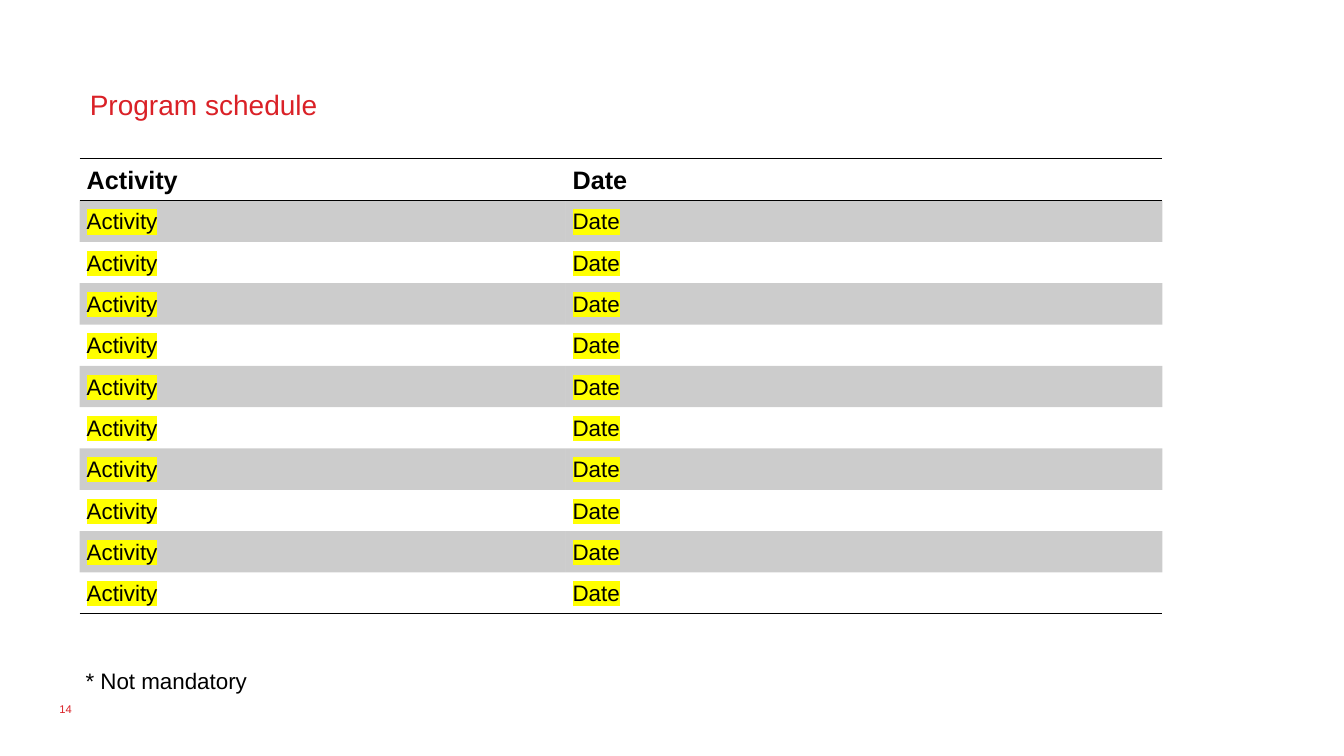
import pptx
import pptx.util
import pptx.dml.color
import pptx.enum.text
import pptx.oxml
import pptx.oxml.ns
from pptx.util import Inches

TITLE = "Program schedule"
HEADINGS = ("Activity", "Date")
SCHEDULE = [("Activity", "Date")] * 10
FOOTNOTE = "* Not mandatory"
PAGE_NUMBER = "14"

RED, BLACK, YELLOW = "DA2127", "000000", "FFFF00"
COLUMN_WIDTHS = (4.82, 5.92)
HEADING_HEIGHT, ROW_HEIGHT = 0.42, 0.41
PLAIN_TABLE_STYLE = "{2D5ABB26-0587-4C30-8999-92F81FD0307C}"
MIDDLE = pptx.enum.text.MSO_ANCHOR.MIDDLE
TOP = pptx.enum.text.MSO_ANCHOR.TOP


def rgb(value):
    return pptx.dml.color.RGBColor.from_string(value)


def xml(markup):
    tag, rest = markup.split(" ", 1)
    return pptx.oxml.parse_xml(f"{tag} {pptx.oxml.ns.nsdecls('a')} {rest}")


def write(frame, text, size=16, color=BLACK, bold=False, highlight=None,
          line_spacing=None, anchor=TOP):
    frame.word_wrap = True
    frame.vertical_anchor = anchor
    paragraph = frame.paragraphs[0]
    paragraph.alignment = pptx.enum.text.PP_ALIGN.LEFT
    if line_spacing:
        paragraph.line_spacing = line_spacing
    run = paragraph.add_run()
    run.text = text
    run.font.name = "Arial"
    run.font.size = pptx.util.Pt(size)
    run.font.bold = bold
    run.font.color.rgb = rgb(color)
    if highlight:
        run.font.fill._xPr.find(pptx.oxml.ns.qn("a:solidFill")).addnext(
            xml(f'<a:highlight ><a:srgbClr val="{highlight}"/></a:highlight>'))


def place(shape, left, top, width, height):
    shape.left, shape.top = Inches(left), Inches(top)
    shape.width, shape.height = Inches(width), Inches(height)


def add_label(slide, box, text, **style):
    label = slide.shapes.add_textbox(*map(Inches, box))
    write(label.text_frame, text, **style)


def format_cell(cell, shaded, ruled_sides):
    cell.margin_left = cell.margin_right = Inches(0.07)
    cell.margin_top = cell.margin_bottom = 0
    cell.vertical_anchor = MIDDLE
    properties = cell._tc.get_or_add_tcPr()
    for side in ruled_sides:
        properties.append(xml(
            f'<a:ln{side} w="12700"><a:solidFill><a:srgbClr val="{BLACK}"/>'
            f'</a:solidFill></a:ln{side}>'))
    if shaded:
        cell.fill.solid()
        cell.fill.fore_color.rgb = rgb(BLACK)
        black = properties.find(".//" + pptx.oxml.ns.qn("a:solidFill") + "/")
        black.append(xml('<a:alpha val="20000"/>'))
    else:
        cell.fill.background()


def add_schedule(slide):
    rows = [HEADINGS] + SCHEDULE
    height = HEADING_HEIGHT + ROW_HEIGHT * len(SCHEDULE)
    schedule = slide.shapes.add_table(
        len(rows), len(HEADINGS), Inches(0.79), Inches(1.57),
        Inches(sum(COLUMN_WIDTHS)), Inches(height)).table
    schedule._tbl.tblPr.find(pptx.oxml.ns.qn("a:tableStyleId")).text = PLAIN_TABLE_STYLE
    schedule.horz_banding = False
    for column, width in zip(schedule.columns, COLUMN_WIDTHS):
        column.width = Inches(width)
    for index, entries in enumerate(rows):
        heading = index == 0
        schedule.rows[index].height = Inches(HEADING_HEIGHT if heading else ROW_HEIGHT)
        ruled_sides = "TB" if heading else "B" if index == len(SCHEDULE) else ""
        for cell, entry in zip(schedule.rows[index].cells, entries):
            format_cell(cell, index % 2 == 1, ruled_sides)
            write(cell.text_frame, entry, size=18 if heading else 16, bold=heading,
                  highlight=None if heading else YELLOW, line_spacing=1.07,
                  anchor=None)
            cell.vertical_anchor = MIDDLE


def main():
    deck = pptx.Presentation()
    deck.slide_width, deck.slide_height = Inches(13.33), Inches(7.5)
    slide = deck.slides.add_slide(deck.slide_layouts[5])
    place(slide.shapes.title, 0.79, 0.79, 11.49, 0.43)
    write(slide.shapes.title.text_frame, TITLE, size=20, color=RED, line_spacing=1.07)
    add_schedule(slide)
    add_label(slide, (0.75, 6.57, 2.71, 0.37), FOOTNOTE)
    add_label(slide, (0.49, 6.83, 3, 0.4), PAGE_NUMBER, size=8, color=RED, anchor=MIDDLE)
    deck.save("out.pptx")


if __name__ == "__main__":
    main()
